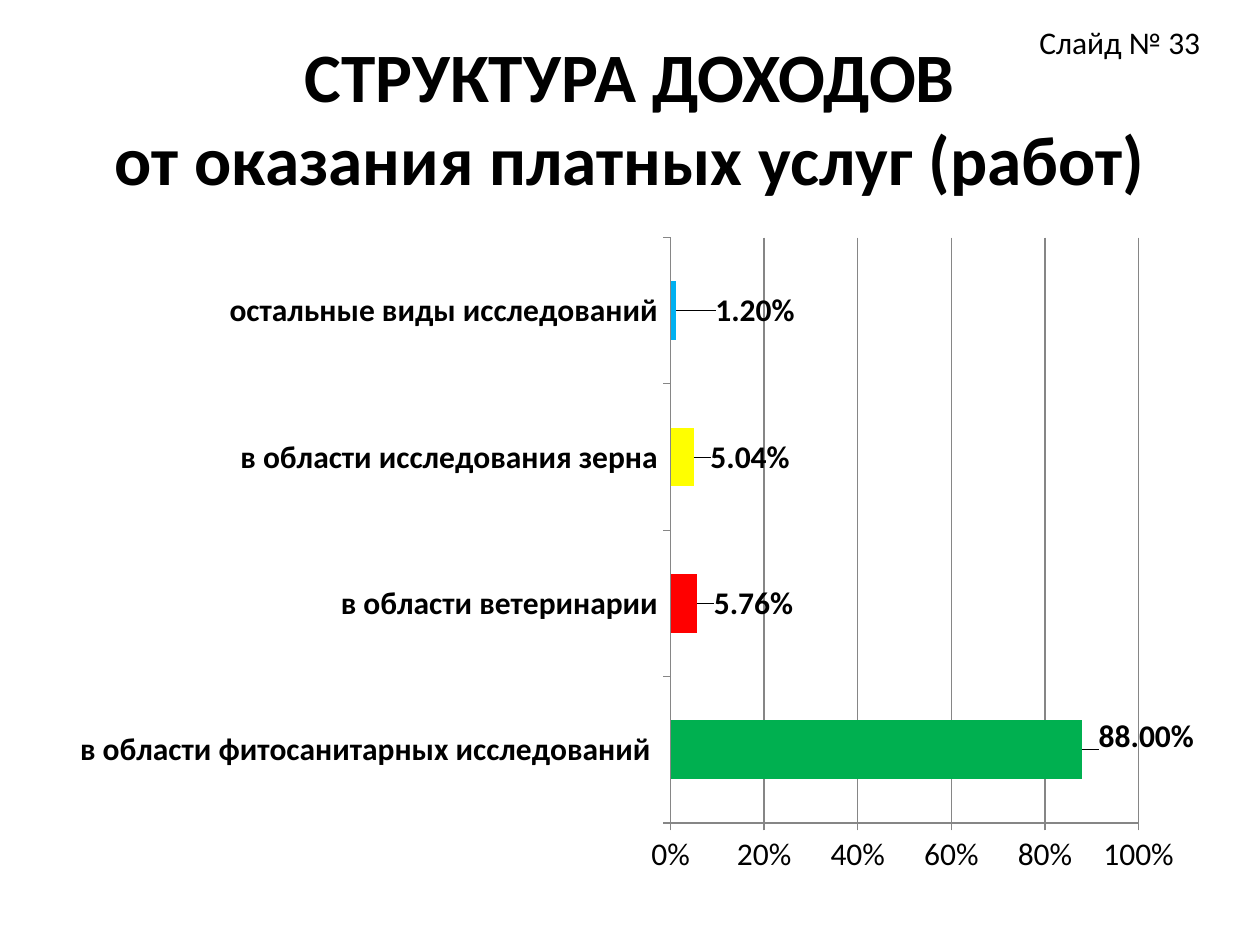
from dataclasses import dataclass

import lxml.etree
import pptx
import pptx.chart.data
import pptx.dml.color
import pptx.enum.chart
import pptx.enum.text
import pptx.oxml.ns
import pptx.util

Inches = pptx.util.Inches
Color = pptx.dml.color.RGBColor


@dataclass(frozen=True)
class Theme:
    font: str = "Calibri"
    title_size: float = 39.6
    text_size: float = 18
    text: Color = Color(0x00, 0x00, 0x00)
    line: Color = Color(0x86, 0x86, 0x86)


@dataclass(frozen=True)
class Income:
    """One bar; label shifts are fractions of the chart's size."""
    name: str
    share: float
    color: Color
    shift_x: float
    shift_y: float = 0


THEME = Theme()
INCOMES = [
    Income("в области фитосанитарных исследований ", 0.88, Color(0x00, 0xB0, 0x50), 0.01, -0.02),
    Income("в области ветеринарии", 0.0576, Color(0xFF, 0x00, 0x00), 0.01),
    Income("в области исследования зерна", 0.0504, Color(0xFF, 0xFF, 0x00), 0.01),
    Income("остальные виды исследований", 0.012, Color(0x00, 0xB0, 0xF0), 0.03),
]


def style_font(font, size: float, bold: bool = False) -> None:
    font.name = THEME.font
    font.size = pptx.util.Pt(size)
    font.bold = bold
    font.color.rgb = THEME.text


def make_layout(**settings) -> lxml.etree._Element:
    """Return a manual chart layout holding the given settings in order."""
    layout = lxml.etree.Element(pptx.oxml.ns.qn("c:layout"))
    manual = lxml.etree.SubElement(layout, pptx.oxml.ns.qn("c:manualLayout"))
    for name, value in settings.items():
        lxml.etree.SubElement(manual, pptx.oxml.ns.qn(f"c:{name}")).set("val", str(value))
    return layout


def add_title(slide) -> None:
    title = slide.shapes.title
    title.left, title.top = Inches(0.5), Inches(0.3)
    title.width, title.height = Inches(9), Inches(1.25)
    frame = title.text_frame
    frame.text = "СТРУКТУРА ДОХОДОВ\vот оказания платных услуг (работ)"
    frame.vertical_anchor = pptx.enum.text.MSO_ANCHOR.MIDDLE
    para = frame.paragraphs[0]
    para.alignment = pptx.enum.text.PP_ALIGN.CENTER
    style_font(para.font, THEME.title_size, bold=True)


def add_slide_number(slide) -> None:
    box = slide.shapes.add_textbox(Inches(8.15), Inches(0.13), Inches(1.65), Inches(0.4))
    box.text_frame.word_wrap = True
    para = box.text_frame.paragraphs[0]
    para.text = "Слайд № 33"
    style_font(para.font, THEME.text_size)


def style_axes(chart) -> None:
    for axis, bold in ((chart.category_axis, True), (chart.value_axis, False)):
        axis.major_tick_mark = pptx.enum.chart.XL_TICK_MARK.OUTSIDE
        axis.minor_tick_mark = pptx.enum.chart.XL_TICK_MARK.NONE
        axis.format.line.color.rgb = THEME.line
        style_font(axis.tick_labels.font, THEME.text_size, bold)
    chart.category_axis.has_major_gridlines = False
    value_axis = chart.value_axis
    value_axis.minimum_scale, value_axis.maximum_scale, value_axis.major_unit = 0, 1, 0.2
    value_axis.has_major_gridlines = True
    value_axis.major_gridlines.format.line.color.rgb = THEME.line
    value_axis.tick_labels.number_format = "0%"
    value_axis.tick_labels.number_format_is_linked = False


def style_bars(chart) -> None:
    plot = chart.plots[0]
    plot.gap_width = 150
    plot.vary_by_categories = False
    series = plot.series[0]
    labels = series.data_labels
    labels.show_value = True
    labels.number_format = "0.00%"
    labels.number_format_is_linked = False
    style_font(labels.font, THEME.text_size, bold=True)
    for index, income in enumerate(INCOMES):
        point = series.points[index]
        point.format.fill.solid()
        point.format.fill.fore_color.rgb = income.color
        label = point.data_label
        label.position = pptx.enum.chart.XL_LABEL_POSITION.OUTSIDE_END
        style_font(label.font, THEME.text_size, bold=True)
    for income, label in zip(INCOMES, chart._chartSpace.xpath(".//c:dLbl")):
        label.insert(1, make_layout(x=income.shift_x, y=income.shift_y))


def add_income_chart(slide) -> None:
    data = pptx.chart.data.CategoryChartData(number_format="0.00%")
    data.categories = [income.name for income in INCOMES]
    data.add_series("Series 1", [income.share for income in INCOMES])
    chart = slide.shapes.add_chart(
        pptx.enum.chart.XL_CHART_TYPE.BAR_CLUSTERED,
        Inches(0.43), Inches(1.78), Inches(9.06), Inches(5.28), data,
    ).chart
    chart.has_legend = False
    chart.has_title = False
    style_font(chart.font, THEME.text_size)
    style_axes(chart)
    style_bars(chart)
    plot_area = chart._chartSpace.xpath(".//c:plotArea")[0]
    for layout in plot_area.xpath("./c:layout"):
        plot_area.remove(layout)
    plot_area.insert(0, make_layout(
        layoutTarget="inner", xMode="edge", yMode="edge", x=0.54, y=0.02, w=0.41, h=0.88))


def main() -> None:
    deck = pptx.Presentation()
    deck.slide_width, deck.slide_height = Inches(10), Inches(7.5)
    slide = deck.slides.add_slide(deck.slide_layouts[5])
    add_title(slide)
    add_income_chart(slide)
    add_slide_number(slide)
    deck.save("out.pptx")


if __name__ == "__main__":
    main()
